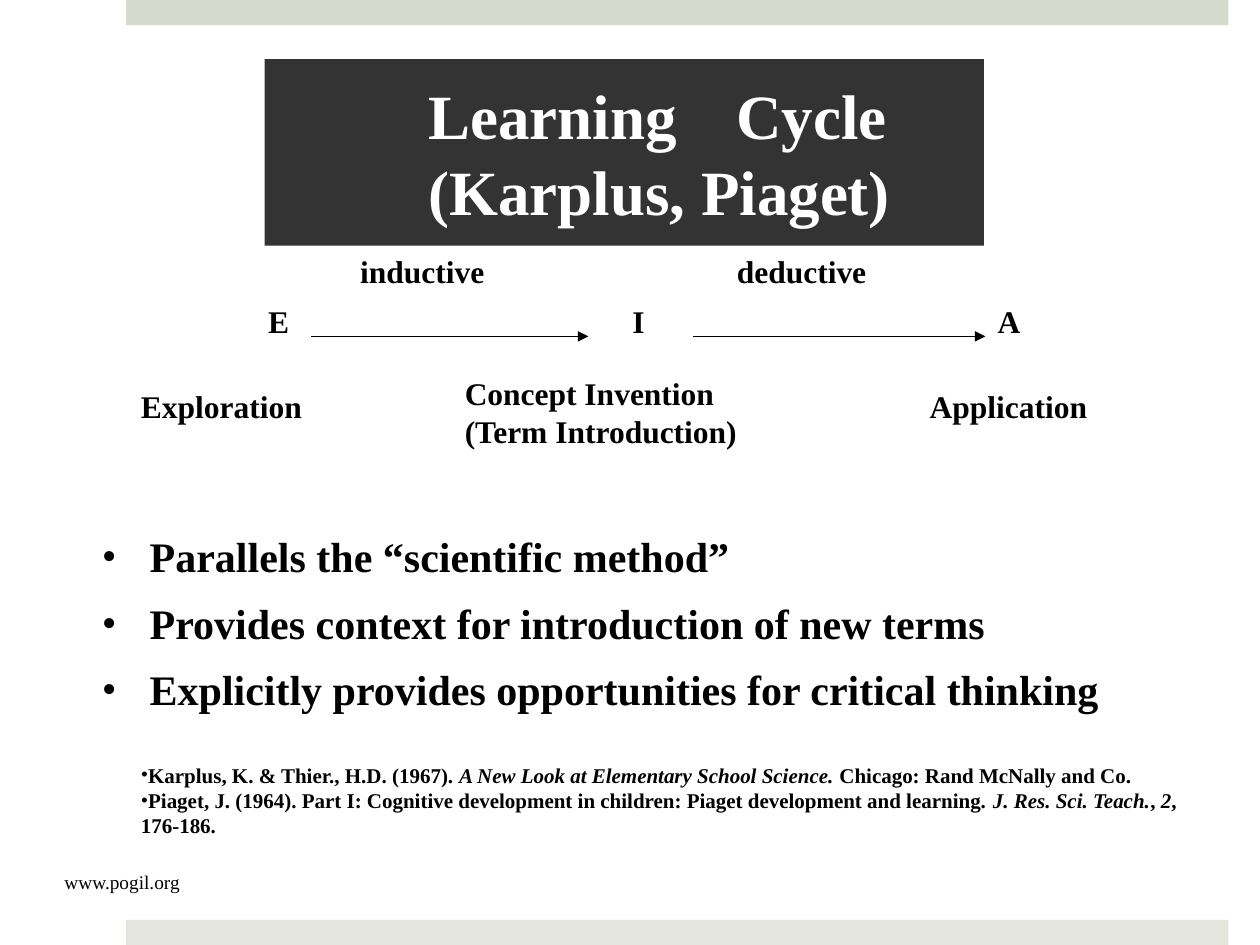
from dataclasses import dataclass

import pptx
import pptx.dml.color
import pptx.enum.shapes
import pptx.enum.text
import pptx.oxml
import pptx.oxml.ns
import pptx.util
from pptx.shapes.base import BaseShape
from pptx.slide import Slide

COLUMNS, ROWS = 100, 75
WIDTH, HEIGHT = pptx.util.Inches(10), pptx.util.Inches(7.5)
FONT = "Times New Roman"
BLACK = pptx.dml.color.RGBColor(0, 0, 0)
WHITE = pptx.dml.color.RGBColor(255, 255, 255)
CHARCOAL = pptx.dml.color.RGBColor(0x33, 0x33, 0x33)
SAGE = pptx.dml.color.RGBColor(0xD6, 0xD9, 0xCD)
PALE_SAGE = pptx.dml.color.RGBColor(0xE4, 0xE6, 0xDE)
ALIGN = pptx.enum.text.PP_ALIGN
FIT = pptx.enum.text.MSO_AUTO_SIZE.SHAPE_TO_FIT_TEXT
NAMESPACE = pptx.oxml.ns.nsdecls("a")


@dataclass(frozen=True)
class Area:
    column: float
    row: float
    columns: float
    rows: float


@dataclass(frozen=True)
class Label:
    area: Area
    lines: tuple[str, ...]


@dataclass(frozen=True)
class Arrow:
    start: float
    end: float
    row: float


@dataclass(frozen=True)
class Style:
    size: float
    bold: bool = True
    color: pptx.dml.color.RGBColor = BLACK
    bullet: bool = False
    margin: float = 0
    indent: float = 0
    paragraph: tuple[tuple[str, object], ...] = ()
    gap: float = 0


BANDS = ((Area(10, 0, 87.5, 2), SAGE), (Area(10, 73, 87.5, 2), PALE_SAGE))
TITLE = Area(21, 4.7, 57.1, 14.8)
LABELS = (
    Label(Area(20.3, 23.5, 3.8, 4), ("E",)),
    Label(Area(49.2, 23.5, 3, 4), ("I",)),
    Label(Area(78.2, 23.5, 3.7, 4), ("A",)),
    Label(Area(10.2, 30.2, 14.8, 4), ("Exploration",)),
    Label(Area(35.9, 29.2, 23.8, 7.1), ("Concept Invention", "(Term Introduction)")),
    Label(Area(72.8, 30.2, 14.5, 4), ("Application",)),
    Label(Area(27.6, 19.5, 12.2, 4), ("inductive",)),
    Label(Area(57.5, 19.5, 12.4, 4), ("deductive",)),
)
ARROWS = (Arrow(24.7, 46.7, 26.7), Arrow(55, 78.2, 26.7))
POINTS = (
    "Parallels the “scientific method”",
    "Provides context for introduction of new terms",
    "Explicitly provides opportunities for critical thinking",
)
REFERENCES = (
    (
        ("Karplus, K. & Thier., H.D. (1967). ", False),
        ("A New Look at Elementary School Science.", True),
        (" Chicago: Rand McNally and Co.", False),
    ),
    (
        ("Piaget, J. (1964). Part I: Cognitive development in children: "
         "Piaget development and learning. ", False),
        ("J. Res. Sci. Teach.", True),
        (", ", False),
        ("2", True),
        (", 176-186.", False),
    ),
)

TITLE_STYLE = Style(36, color=WHITE, paragraph=(("alignment", ALIGN.JUSTIFY),))
LABEL_STYLE = Style(18)
POINT_STYLE = Style(24, bullet=True, margin=3.8, indent=-3.8,
                    paragraph=(("line_spacing", 0.9),), gap=12)
REFERENCE_STYLE = Style(12, bullet=True)
FOOTER_STYLE = Style(11, bold=False, margin=1.2, paragraph=(("alignment", ALIGN.CENTER),))


def across(columns: float) -> int:
    return round(WIDTH * columns / COLUMNS)


def down(rows: float) -> int:
    return round(HEIGHT * rows / ROWS)


def place(area: Area) -> tuple[int, int, int, int]:
    return across(area.column), down(area.row), across(area.columns), down(area.rows)


def apply(target: object, values: dict[str, object]) -> None:
    for name, value in values.items():
        setattr(target, name, value)


def write(shape: BaseShape, paragraphs: tuple, style: Style, **frame_format: object) -> None:
    frame = shape.text_frame
    apply(frame, frame_format)
    for index, pieces in enumerate(paragraphs):
        paragraph = frame.add_paragraph() if index else frame.paragraphs[0]
        properties = paragraph._p.get_or_add_pPr()
        properties.set("marL", str(across(style.margin)))
        properties.set("indent", str(across(style.indent)))
        if style.bullet:
            for element in (f'buFont {NAMESPACE} typeface="{FONT}"',
                            f'buChar {NAMESPACE} char="•"'):
                properties.append(pptx.oxml.parse_xml(f"<a:{element}/>"))
        apply(paragraph, dict(style.paragraph))
        if index and style.gap:
            paragraph.space_before = pptx.util.Pt(style.gap)
        for text, italic in pieces:
            if text == "\n":
                paragraph.add_line_break()
                continue
            run = paragraph.add_run()
            run.text = text
            apply(run.font, {"name": FONT, "size": pptx.util.Pt(style.size),
                             "bold": style.bold, "italic": italic})
            run.font.color.rgb = style.color


def plain(*lines: str) -> tuple:
    return tuple(((line, False),) for line in lines)


def add_block(slide: Slide, area: Area, color: pptx.dml.color.RGBColor) -> BaseShape:
    block = slide.shapes.add_shape(pptx.enum.shapes.MSO_SHAPE.RECTANGLE, *place(area))
    block.shadow.inherit = False
    block.fill.solid()
    block.fill.fore_color.rgb = color
    block.line.fill.background()
    return block


def add_text(slide: Slide, area: Area, paragraphs: tuple, style: Style,
             **frame_format: object) -> None:
    write(slide.shapes.add_textbox(*place(area)), paragraphs, style, **frame_format)


def add_arrow(slide: Slide, arrow: Arrow) -> None:
    connector = slide.shapes.add_connector(
        pptx.enum.shapes.MSO_CONNECTOR.STRAIGHT, across(arrow.start), down(arrow.row),
        across(arrow.end), down(arrow.row))
    connector.line.color.rgb = BLACK
    connector.line.width = pptx.util.Pt(0.75)
    connector.line._get_or_add_ln().append(
        pptx.oxml.parse_xml(f'<a:tailEnd {NAMESPACE} type="triangle"/>'))
    connector._element.spPr.append(pptx.oxml.parse_xml(f"<a:effectLst {NAMESPACE}/>"))


def main() -> None:
    presentation = pptx.Presentation()
    apply(presentation, {"slide_width": WIDTH, "slide_height": HEIGHT})
    slide = presentation.slides.add_slide(presentation.slide_layouts[6])
    for area, color in BANDS:
        add_block(slide, area, color)
    title = (("Learning Cycle ", False), ("\n", False), ("(Karplus, Piaget)", False))
    write(add_block(slide, TITLE, CHARCOAL), (title,), TITLE_STYLE, word_wrap=True,
          vertical_anchor=pptx.enum.text.MSO_ANCHOR.MIDDLE,
          margin_left=across(13), margin_right=across(3))
    add_text(slide, Area(7.1, 42.1, 90.8, 15.8), plain(*POINTS), POINT_STYLE, word_wrap=True)
    add_text(slide, Area(10.2, 60, 86.7, 5), REFERENCES, REFERENCE_STYLE, word_wrap=True)
    for label in LABELS:
        add_text(slide, label.area, plain(*label.lines), LABEL_STYLE,
                 word_wrap=False, auto_size=FIT)
    for arrow in ARROWS:
        add_arrow(slide, arrow)
    add_text(slide, Area(2.8, 68.6, 12.6, 2.9), plain("www.pogil.org"), FOOTER_STYLE,
             word_wrap=True, auto_size=FIT)
    presentation.save("out.pptx")


if __name__ == "__main__":
    main()
